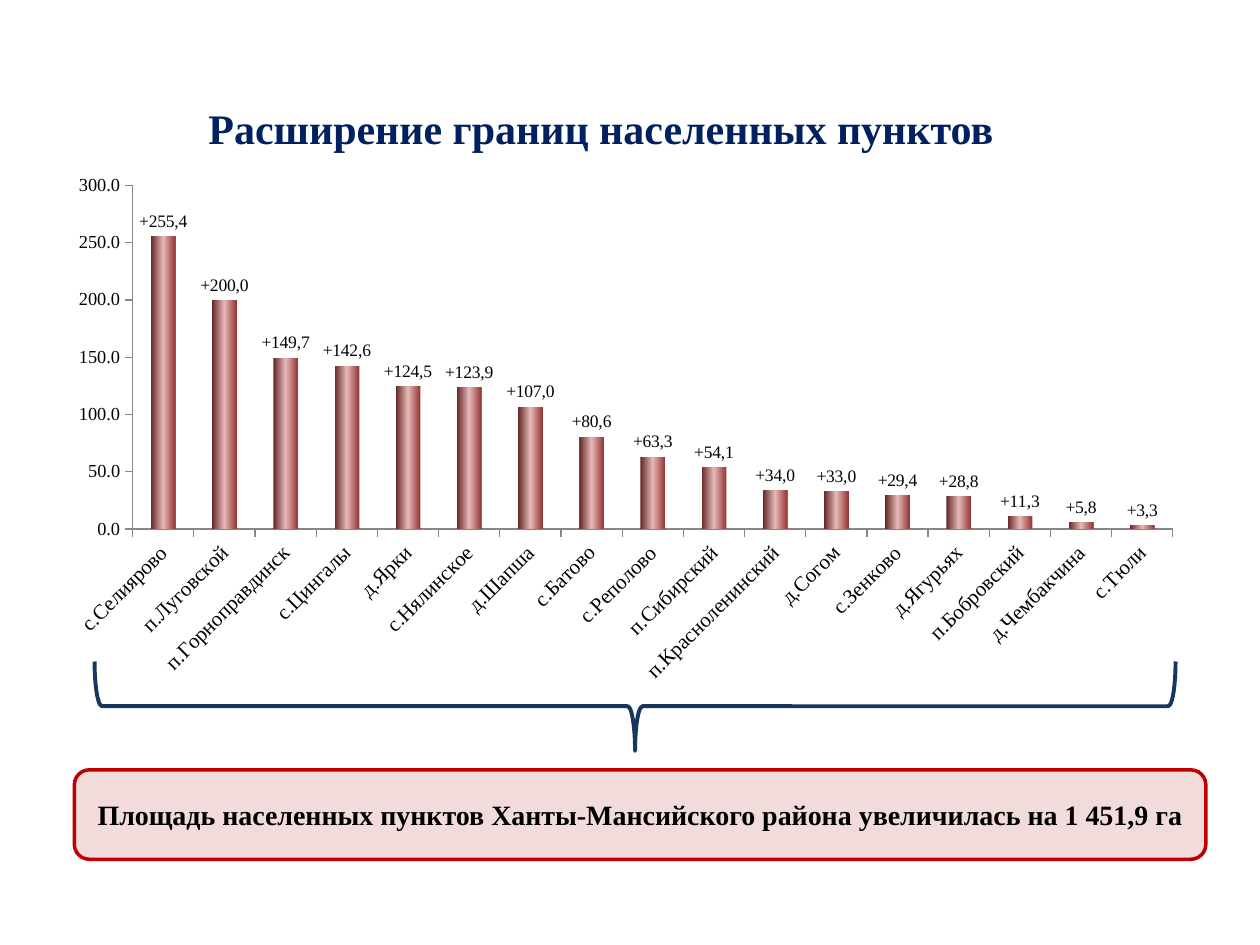
from dataclasses import dataclass

from lxml import etree
from pptx import Presentation
from pptx.chart.data import CategoryChartData
from pptx.dml.color import RGBColor
from pptx.enum.chart import XL_CHART_TYPE, XL_LABEL_POSITION, XL_TICK_MARK
from pptx.enum.shapes import MSO_SHAPE
from pptx.enum.text import MSO_ANCHOR, PP_ALIGN
from pptx.oxml.ns import qn
from pptx.util import Inches, Pt

COLUMN = XL_CHART_TYPE.COLUMN_CLUSTERED
ABOVE = XL_LABEL_POSITION.OUTSIDE_END
OUT = XL_TICK_MARK.OUTSIDE
NONE = XL_TICK_MARK.NONE
BRACE = MSO_SHAPE.RIGHT_BRACE
ROUND = MSO_SHAPE.ROUNDED_RECTANGLE
MIDDLE = MSO_ANCHOR.MIDDLE
CENTER = PP_ALIGN.CENTER


@dataclass(frozen=True)
class Theme:
    font: str = "Times New Roman"
    ink: str = "000000"
    navy: str = "002060"
    brace: str = "17375E"
    red: str = "C00000"
    pink: str = "F2DCDB"
    axis: str = "868686"
    bars: tuple = ((0, "632523"), (50, "E6B9B8"), (100, "953735"))
    title: float = 24
    note: float = 16
    names: float = 12
    scale: float = 10.5
    label: float = 10


THEME = Theme()

AREAS = {
    "с.Селиярово": 255.4,
    "п.Луговской": 200.0,
    "п.Горноправдинск": 149.7,
    "с.Цингалы": 142.6,
    "д.Ярки": 124.5,
    "с.Нялинское": 123.9,
    "д.Шапша": 107.0,
    "с.Батово": 80.6,
    "с.Реполово": 63.3,
    "п.Сибирский": 54.1,
    "п.Красноленинский": 34.0,
    "д.Согом": 33.0,
    "с.Зенково": 29.4,
    "д.Ягурьях": 28.8,
    "п.Бобровский": 11.3,
    "д.Чембакчина": 5.8,
    "с.Тюли": 3.3,
}


def style(font, size, color=THEME.ink, bold=False):
    font.name = THEME.font
    font.size = Pt(size)
    font.bold = bold
    font.color.rgb = RGBColor.from_string(color)


def write(frame, text, size, color=THEME.ink, bold=False, wrap=True):
    frame.word_wrap = wrap
    frame.vertical_anchor = MIDDLE
    para = frame.paragraphs[0]
    para.alignment = CENTER
    run = para.add_run()
    run.text = text
    style(run.font, size, color, bold)


def stroke(line, color, width):
    line.color.rgb = RGBColor.from_string(color)
    line.width = Pt(width)


def add_title(slide, left, top, width, height):
    title = slide.shapes.title
    title.left, title.top = Inches(left), Inches(top)
    title.width, title.height = Inches(width), Inches(height)
    write(title.text_frame, "Расширение границ населенных пунктов",
          THEME.title, color=THEME.navy, bold=True)


def shade(series):
    fill = series.format.fill
    fill.gradient()
    fill.gradient_angle = 0
    stops = next(series._element.iter(qn("a:gsLst")))
    for stop in list(stops):
        stops.remove(stop)
    for place, color in THEME.bars:
        stop = etree.SubElement(stops, qn("a:gs"), pos=str(place * 1000))
        etree.SubElement(stop, qn("a:srgbClr"), val=color)


def set_axis(axis, size):
    axis.has_major_gridlines = False
    axis.major_tick_mark = OUT
    axis.minor_tick_mark = NONE
    stroke(axis.format.line, THEME.axis, 0.75)
    style(axis.tick_labels.font, size)


def add_bars(slide, left, top, width, height):
    data = CategoryChartData(number_format="0.0")
    data.categories = list(AREAS)
    data.add_series("Series 1", list(AREAS.values()))
    chart = slide.shapes.add_chart(
        COLUMN, Inches(left), Inches(top), Inches(width), Inches(height), data
    ).chart
    chart.has_legend = False
    chart.has_title = False
    style(chart.font, THEME.label)

    set_axis(chart.category_axis, THEME.names)
    names = chart.category_axis._element.find(qn("c:txPr"))
    names.find(qn("a:bodyPr")).set("rot", "-2700000")
    scale = chart.value_axis
    set_axis(scale, THEME.scale)
    scale.minimum_scale, scale.maximum_scale, scale.major_unit = 0, 300, 50
    scale.tick_labels.number_format = "0.0"
    scale.tick_labels.number_format_is_linked = False

    plot = chart.plots[0]
    plot.gap_width = 150
    plot.vary_by_categories = False
    series = plot.series[0]
    shade(series)
    labels = series.data_labels
    labels.show_value = True
    labels.position = ABOVE
    labels.number_format = "0.0"
    labels.number_format_is_linked = False
    style(labels.font, THEME.label)
    for spot, area in enumerate(AREAS.values()):
        label = series.points[spot].data_label
        write(label.text_frame, f"+{area:.1f}".replace(".", ","),
              THEME.label, wrap=False)
        label.position = ABOVE


def add_brace(slide, left, top, width, height):
    brace = slide.shapes.add_shape(
        BRACE, Inches(left + (width - height) / 2),
        Inches(top + (height - width) / 2), Inches(height), Inches(width))
    brace.rotation = 90
    brace.shadow.inherit = False
    brace.fill.background()
    stroke(brace.line, THEME.brace, 2.25)


def add_note(slide, left, top, width, height):
    note = slide.shapes.add_shape(
        ROUND, Inches(left), Inches(top), Inches(width), Inches(height))
    note.shadow.inherit = False
    note.fill.solid()
    note.fill.fore_color.rgb = RGBColor.from_string(THEME.pink)
    stroke(note.line, THEME.red, 2)
    write(note.text_frame,
          "Площадь населенных пунктов Ханты-Мансийского района "
          "увеличилась на 1 451,9 га", THEME.note, bold=True)


def main():
    deck = Presentation()
    deck.slide_width, deck.slide_height = Inches(10), Inches(7.5)
    slide = deck.slides.add_slide(deck.slide_layouts[5])
    add_title(slide, 0.91, 0.76, 7.72, 0.5)
    add_bars(slide, 0.43, 1.31, 9.06, 4.19)
    add_brace(slide, 0.75, 5.25, 8.58, 0.71)
    add_note(slide, 0.59, 6.11, 8.98, 0.71)
    deck.save("out.pptx")


if __name__ == "__main__":
    main()
